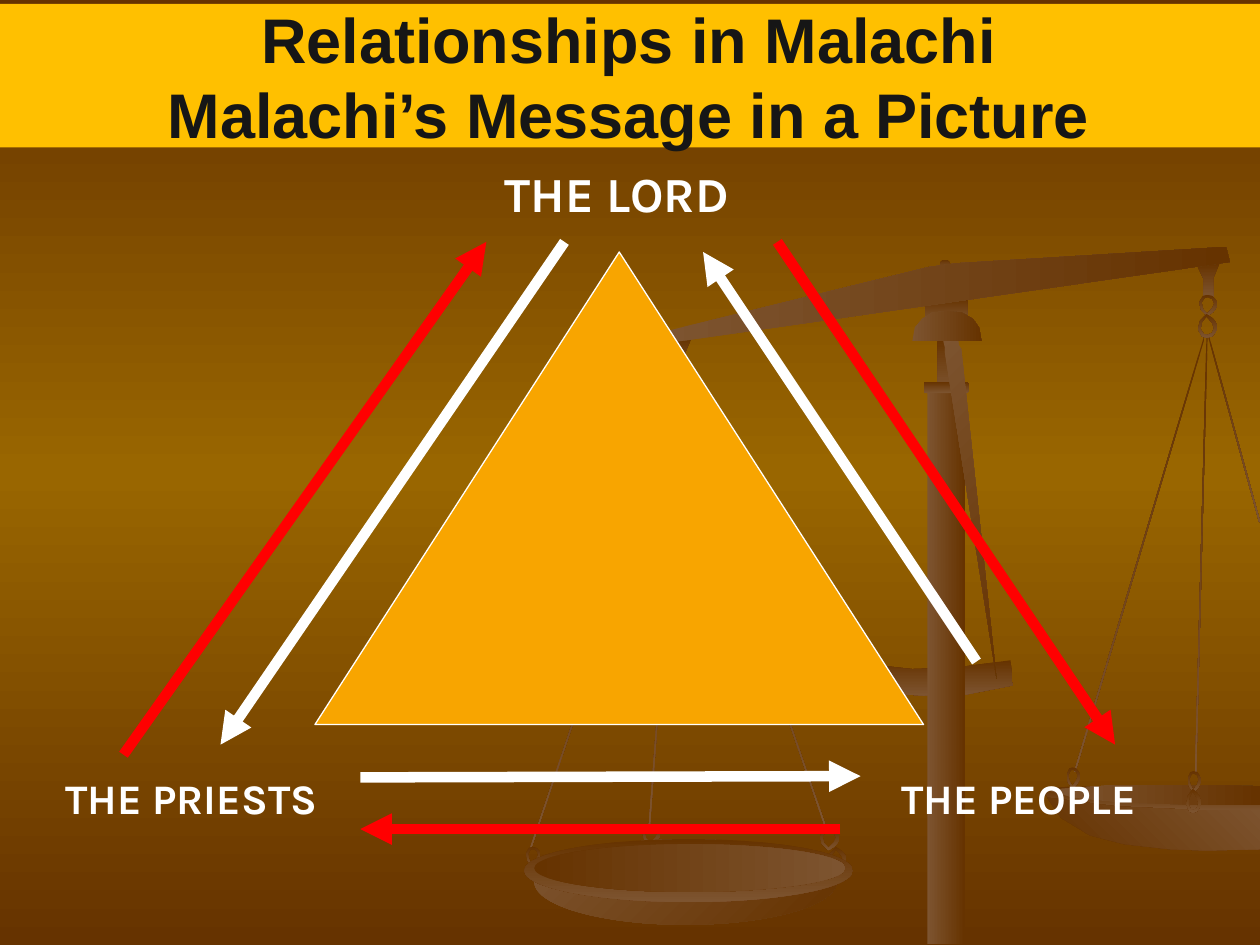
from copy import deepcopy
from lxml import etree
from pptx import Presentation
from pptx.dml.color import RGBColor
from pptx.enum.shapes import MSO_CONNECTOR, MSO_SHAPE
from pptx.enum.text import MSO_ANCHOR, MSO_AUTO_SIZE, PP_ALIGN
from pptx.oxml.ns import qn
from pptx.util import Inches, Pt

RECT, ELLIPSE, ROUND = MSO_SHAPE.RECTANGLE, MSO_SHAPE.OVAL, MSO_SHAPE.ROUNDED_RECTANGLE
TRIANGLE = MSO_SHAPE.ISOSCELES_TRIANGLE
STRAIGHT = MSO_CONNECTOR.STRAIGHT
LEFT, CENTER = PP_ALIGN.LEFT, PP_ALIGN.CENTER

# Content
TITLE = ["Relationships in Malachi", "Malachi’s Message in a Picture"]
LABELS = [  # text, box, size, alignment
    ("THE LORD", (3.79, 1.25, 2.21, 0.57), 28, CENTER),
    ("THE PRIESTS", (0.42, 6.08, 2.67, 0.51), 24, LEFT),
    ("THE PEOPLE", (6.67, 6.08, 2.83, 0.51), 24, CENTER),
]
ARROWS = {  # colour: (from, to)
    "FFFFFF": [((2.86, 6.17), (6.83, 6.16)), ((4.48, 1.92), (1.75, 5.91)),
               ((7.75, 5.25), (5.58, 2))],
    "FF0000": [((6.67, 6.58), (2.86, 6.58)), ((0.98, 5.99), (3.86, 1.92)),
               ((6.17, 1.92), (8.85, 5.91))],
}

# Scales: gradients as (start, end, clockwise angle)
DARK, PALE = "663300", "7D5430"
DOWN, ACROSS = (DARK, PALE, 90), (PALE, DARK, 0)
DIAGONAL = (PALE, DARK, 45)
WIRES = [  # left, top, height, rotation
    (9.04, 2.6, 3.6, 16.6), (9.53, 2.66, 3.47, 1.5), (9.79, 2.64, 1.53, 344.6),
    (5.98, 3.15, 3.53, 341), (4.79, 3.16, 3.68, 18.6), (5.27, 3.25, 3.31, 4.2),
]
# Outlines in hundredths of an inch
SHELF = [(697, 528), (724, 531), (757, 530), (802, 524), (804, 544), (768, 551),
         (733, 552), (714, 551), (696, 547)]
PAN_RIM = [(958, 624), (897, 624), (851, 624), (831, 626), (827, 628), (832, 633),
           (852, 638), (894, 642), (935, 644), (1000, 645), (1000, 626)]
PAN_BOWL = [(831, 633), (842, 649), (865, 663), (892, 670), (928, 674), (957, 675),
            (1000, 674), (1000, 643), (953, 643), (886, 640)]
PAN_INSIDE = [(956, 623), (886, 623), (843, 626), (834, 628), (852, 633), (893, 637),
              (955, 639), (1000, 639), (1000, 624)]
BEAM = [(973, 196), (976, 208), (525, 273), (524, 264), (737, 212), (759, 209)]
BRACE = [(791, 539), (750, 280), (750, 276), (748, 268), (760, 265), (761, 274), (763, 277)]
CAP = [(752, 247), (763, 248), (772, 253), (777, 260), (779, 271), (724, 271),
       (726, 260), (732, 253), (740, 248)]
# Outlines in percent of their box
HANGER = [(100, 0), (0, 6), (28, 45), (28, 100), (72, 100), (72, 43)]
RING = [[(47, 100), (80, 80), (100, 57), (100, 30), (75, 5), (47, 0), (25, 5), (5, 35), (15, 70)],
        [(53, 12), (75, 20), (85, 40), (75, 62), (47, 88), (25, 65), (18, 35), (35, 14)]]
HANGERS = [(5.31, 2.68, 0.18, 0.27), (9.5, 2.09, 0.18, 0.27)]
RINGS_DOWN = [(8.46, 6.09, 0.11, 0.17), (5.31, 2.93, 0.16, 0.17), (9.51, 2.34, 0.15, 0.17),
              (9.42, 6.12, 0.11, 0.17), (5.09, 6.55, 0.15, 0.16), (4.17, 6.72, 0.12, 0.16)]
RINGS_UP = [(5.31, 3.07, 0.16, 0.19), (9.5, 2.49, 0.16, 0.19), (6.56, 6.72, 0.16, 0.19)]
BOWL = [((4.24, 6.66, 2.4, 0.68), DIAGONAL), ((4.16, 6.66, 2.61, 0.5), DOWN),
        ((4.24, 6.7, 2.47, 0.38), (DARK, PALE, 0))]
POST = [(RECT, (7.36, 3.08, 0.3, 4.41), ACROSS), (RECT, (7.44, 2.68, 0.13, 0.42), DOWN),
        (ROUND, (7.33, 3.03, 0.36, 0.09), DOWN)]


def rgb(color):
    return RGBColor.from_string(color)


def fill_gradient(fill, start, end, angle):
    fill.gradient()
    fill.gradient_angle = (360 - angle) % 360
    for stop, color, pos in zip(fill.gradient_stops, (start, end), (0, 1)):
        stop.color.rgb = rgb(color)
        stop.position = pos


def finish(sp, gradient):
    sp.shadow.inherit = False
    sp.line.fill.background()
    fill_gradient(sp.fill, *gradient)


def add_part(kind, box, gradient=DOWN, rotation=0):
    sp = shapes.add_shape(kind, *map(Inches, box))
    sp.rotation = rotation
    finish(sp, gradient)


def add_outline(*contours, gradient=DOWN):
    """Draw contours given in hundredths of an inch as one shape."""
    builder = None
    for contour in contours:
        first, *rest = [(Inches(x / 100), Inches(y / 100)) for x, y in contour]
        if builder is None:
            builder = shapes.build_freeform(*first, scale=1.0)
        else:
            builder.move_to(*first)
        builder.add_line_segments(rest, close=True)
    finish(builder.convert_to_shape(), gradient)


def fit(contour, box, flip=False):
    x, y, w, h = box
    return [(100 * x + w * px, 100 * y + h * (100 - py if flip else py)) for px, py in contour]


def set_font(r, **values):
    r.font.color.rgb = rgb(values.pop("color"))
    for name, value in values.items():
        setattr(r.font, name, value)


prs = Presentation()
prs.slide_width, prs.slide_height = Inches(10), Inches(7.5)
s = prs.slides.add_slide(prs.slide_layouts[5])
shapes = s.shapes

# Background: dark, gold in the middle, dark
bg = s.background.fill
fill_gradient(bg, DARK, DARK, 90)
first_stop = s.background._cSld.find(".//" + qn("a:gs"))
first_stop.addnext(deepcopy(first_stop))
middle = bg.gradient_stops[1]
middle.position, middle.color.rgb = 0.5, rgb("996600")

# Scales
add_part(RECT, (7.34, 2.37, 0.34, 0.18))
add_part(ELLIPSE, (7.46, 2.06, 0.08, 0.08))
for x, y, h, rotation in WIRES:
    add_part(RECT, (x, y, 0.01, h), rotation=rotation)
add_outline(SHELF)
add_outline(PAN_RIM)
add_outline(PAN_BOWL, gradient=(DARK, PALE, 315))
add_outline(PAN_INSIDE, gradient=ACROSS)
for box in HANGERS:
    add_outline(fit(HANGER, box))
for box in RINGS_DOWN:
    add_outline(*[fit(c, box) for c in RING])
for box in RINGS_UP:
    add_outline(*[fit(c, box, flip=True) for c in RING])
add_outline(BEAM, gradient=ACROSS)
for box, gradient in BOWL:
    add_part(ELLIPSE, box, gradient)
add_outline(*[fit(c, (6.5, 6.58, 0.16, 0.17)) for c in RING])
add_outline(*[fit(c, (9.41, 6.26, 0.12, 0.19), flip=True) for c in RING])
for kind, box, gradient in POST:
    add_part(kind, box, gradient)
add_outline(BRACE, gradient=DIAGONAL)
add_outline(CAP, gradient=ACROSS)

# Title band, in front of the scales
title = shapes.title
shapes._spTree.append(title._element)
title.left, title.top, title.width, title.height = map(Inches, (-0.02, 0.03, 10.02, 1.14))
title.fill.solid()
title.fill.fore_color.rgb = rgb("FFC000")
tf = title.text_frame
tf.auto_size, tf.vertical_anchor = MSO_AUTO_SIZE.NONE, MSO_ANCHOR.MIDDLE
p = tf.paragraphs[0]
p.alignment = CENTER
for i, line in enumerate(TITLE):
    if i:
        p.add_line_break()
    r = p.add_run()
    r.text = line
    set_font(r, name="Arial", size=Pt(36), bold=True, color="161616")

# Triangle
sp = shapes.add_shape(TRIANGLE, *map(Inches, (2.5, 2, 4.83, 3.75)))
sp.shadow.inherit = False
sp.fill.solid()
sp.fill.fore_color.rgb = rgb("F8A500")
sp.line.color.rgb, sp.line.width = rgb("FFFFFF"), Pt(0.75)

# Corner labels
for text, box, size, alignment in LABELS:
    tf = shapes.add_textbox(*map(Inches, box)).text_frame
    tf.word_wrap, tf.auto_size = True, MSO_AUTO_SIZE.SHAPE_TO_FIT_TEXT
    p = tf.paragraphs[0]
    p.alignment = alignment
    r = p.add_run()
    r.text = text
    set_font(r, name="Karla", size=Pt(size), bold=True, color="FFFFFF")

# Arrows between the corners
for color, lines in ARROWS.items():
    for start, end in lines:
        cxn = shapes.add_connector(STRAIGHT, *map(Inches, start + end))
        cxn.line.color.rgb, cxn.line.width = rgb(color), Pt(6)
        etree.SubElement(cxn.line._get_or_add_ln(), qn("a:tailEnd"), type="triangle")
        etree.SubElement(cxn._element.spPr, qn("a:effectLst"))

prs.save("out.pptx")
